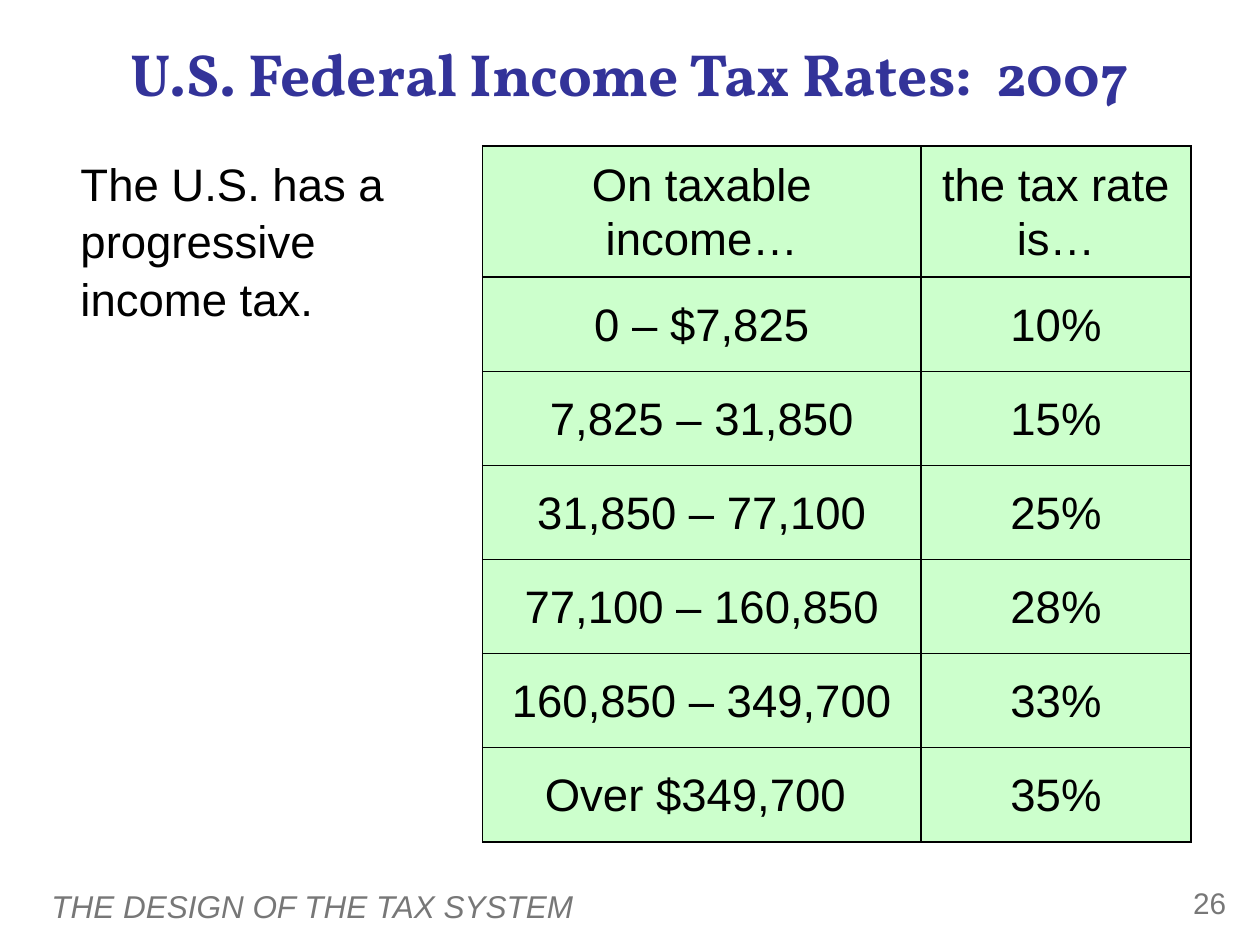
import pptx
import pptx.dml.color
import pptx.enum.text
import pptx.oxml
import pptx.oxml.ns
import pptx.util

Pt = pptx.util.Pt
ALIGN = pptx.enum.text.PP_ALIGN
ANCHOR = pptx.enum.text.MSO_ANCHOR
GREY = "777777"


def write_text(frame, text, size=26, font="Arial", color="000000", bold=False,
               italic=False, align=ALIGN.LEFT, anchor=ANCHOR.TOP, line_spacing=None):
    frame.word_wrap = True
    frame.vertical_anchor = anchor
    paragraph = frame.paragraphs[0]
    paragraph.alignment = align
    paragraph.line_spacing = line_spacing
    run = paragraph.add_run()
    run.text = text
    run.font.size = Pt(size)
    run.font.name = font
    run.font.bold = bold
    run.font.italic = italic
    run.font.color.rgb = pptx.dml.color.RGBColor.from_string(color)


def style_cell(cell, fill, border):
    """Give the cell a solid fill and a 1 pt border on all four sides."""
    properties = cell._tc.get_or_add_tcPr()
    for side in ("lnL", "lnR", "lnT", "lnB"):
        properties.append(pptx.oxml.parse_xml(
            f'<a:{side} {pptx.oxml.ns.nsdecls("a")} w="{Pt(1)}"><a:solidFill>'
            f'<a:srgbClr val="{border}"/></a:solidFill></a:{side}>'))
    cell.fill.solid()
    cell.fill.fore_color.rgb = pptx.dml.color.RGBColor.from_string(fill)


presentation = pptx.Presentation()
presentation.slide_width = Pt(720)
presentation.slide_height = Pt(540)
slide = presentation.slides.add_slide(presentation.slide_layouts[6])

# Title, statement, footer and slide number: left, top, width, height, text, format
text_boxes = [
    (36, 15.8, 648, 51, "U.S. Federal Income Tax Rates:  2007",
     dict(size=34, font="Vollkorn", color="333399", bold=True,
          align=ALIGN.CENTER, anchor=ANCHOR.MIDDLE)),
    (38.9, 84.2, 198, 105.8, "The U.S. has a progressive income tax.",
     dict(line_spacing=1.05)),
    (22.3, 503.3, 577.4, 28.8, "THE DESIGN OF THE TAX SYSTEM",
     dict(size=18, color=GREY, italic=True, anchor=ANCHOR.MIDDLE)),
    (653.8, 501.8, 54, 28.8, "26", dict(size=17, color=GREY, align=ALIGN.RIGHT)),
]
for left, top, width, height, text, text_format in text_boxes:
    box = slide.shapes.add_textbox(Pt(left), Pt(top), Pt(width), Pt(height))
    write_text(box.text_frame, text, **text_format)

# Tax brackets
tax_rates = [
    ("On taxable income…", "the tax rate is…"),
    ("0 – $7,825", "10%"),
    ("7,825 – 31,850", "15%"),
    ("31,850 – 77,100", "25%"),
    ("77,100 – 160,850", "28%"),
    ("160,850 – 349,700", "33%"),
    ("Over $349,700 ", "35%"),
]
column_widths = (250.6, 154.1)
header_height, row_height = 74.9, 53.8
table = slide.shapes.add_table(
    len(tax_rates), len(column_widths), Pt(275.8), Pt(83.5), Pt(sum(column_widths)),
    Pt(header_height + row_height * (len(tax_rates) - 1))).table
for column, width in zip(table.columns, column_widths):
    column.width = Pt(width)
for row_index, row_texts in enumerate(tax_rates):
    table.rows[row_index].height = Pt(row_height if row_index else header_height)
    for column_index, text in enumerate(row_texts):
        cell = table.cell(row_index, column_index)
        style_cell(cell, fill="CCFFCC", border="000000")
        write_text(cell.text_frame, text, align=ALIGN.CENTER, line_spacing=1.05)
        cell.vertical_anchor = ANCHOR.MIDDLE

presentation.save("out.pptx")
